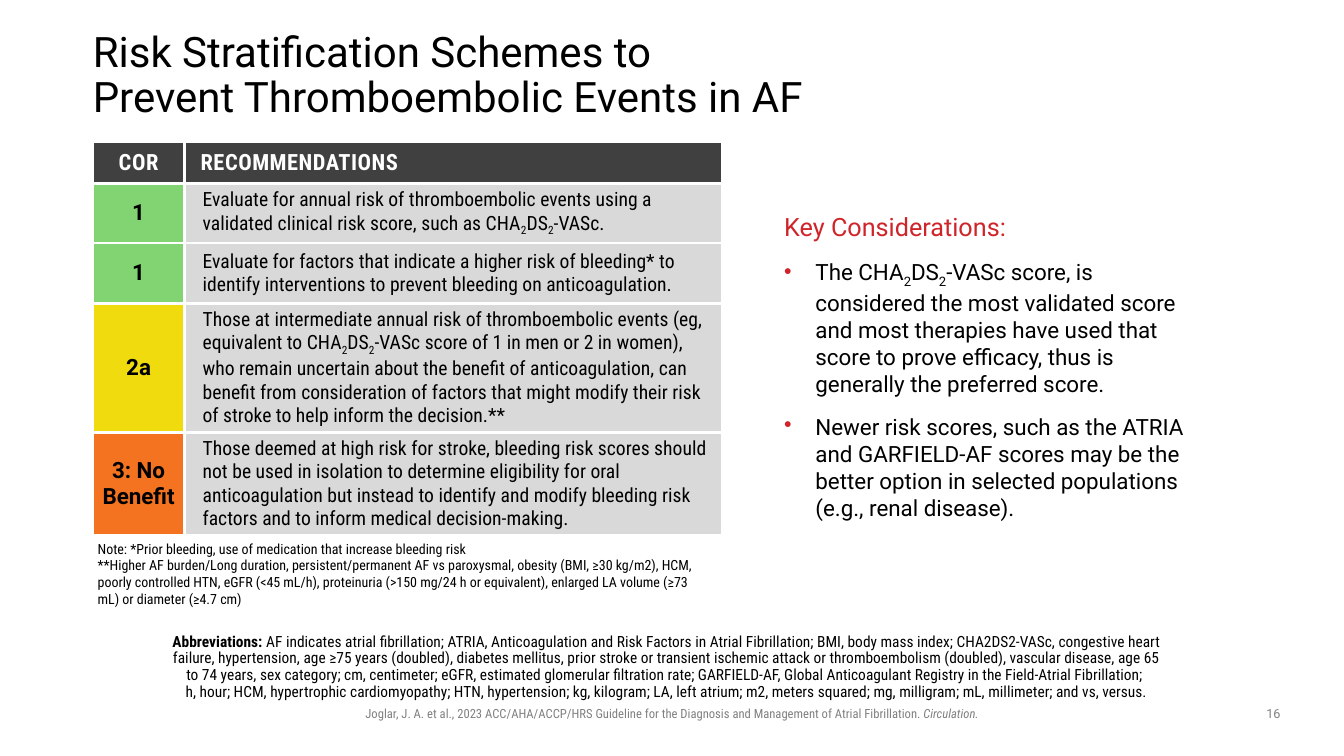
from lxml import etree
from pptx import Presentation
from pptx.dml.color import RGBColor
from pptx.enum.text import MSO_ANCHOR, MSO_AUTO_SIZE, PP_ALIGN
from pptx.oxml.ns import qn
from pptx.util import Inches, Pt

MIDDLE, CENTER, LEFT = MSO_ANCHOR.MIDDLE, PP_ALIGN.CENTER, PP_ALIGN.LEFT
NO_FIT = MSO_AUTO_SIZE.NONE
BLACK = RGBColor(0x00, 0x00, 0x00)
WHITE = RGBColor(0xFF, 0xFF, 0xFF)
DARK = RGBColor(0x40, 0x40, 0x40)
GRAY = RGBColor(0x80, 0x80, 0x80)
PALE = RGBColor(0xD9, 0xD9, 0xD9)
RED = RGBColor(0xCF, 0x24, 0x29)
GREEN = RGBColor(0x82, 0xD4, 0x72)
YELLOW = RGBColor(0xF0, 0xDB, 0x0E)
ORANGE = RGBColor(0xF4, 0x73, 0x20)
SANS, SLIM = "Roboto", "Roboto Condensed"

# Text between two ~ marks takes the special style: subscript, bold or italic.
TITLE = "Risk Stratiﬁcation Schemes to \nPrevent Thromboembolic Events in AF"
HEADS = [("COR", 0.5, CENTER, 0.1), ("RECOMMENDATIONS", 0.4, LEFT, 0.16)]
ADVICE = [
    ("1", GREEN, 0.59,
     "Evaluate for annual risk of thromboembolic events using a validated "
     "clinical risk score, such as CHA~2~DS~2~-VASc."),
    ("1", GREEN, 0.6,
     "Evaluate for factors that indicate a higher risk of bleeding* to "
     "identify interventions to prevent bleeding on anticoagulation."),
    ("2a", YELLOW, 1.28,
     "Those at intermediate annual risk of thromboembolic events (eg, "
     "equivalent to CHA~2~DS~2~-VASc score of 1 in men or 2 in women), who "
     "remain uncertain about the benefit of anticoagulation, can benefit from "
     "consideration of factors that might modify their risk of stroke to help "
     "inform the decision.**"),
    ("3: No Benefit", ORANGE, 1.01,
     "Those deemed at high risk for stroke, bleeding risk scores should not be "
     "used in isolation to determine eligibility for oral anticoagulation but "
     "instead to identify and modify bleeding risk factors and to inform "
     "medical decision-making."),
]
NOTES = [
    "Note: *Prior bleeding, use of medication that increase bleeding risk",
    "**Higher AF burden/Long duration, persistent/permanent AF vs paroxysmal, "
    "obesity (BMI, ≥30 kg/m2), HCM, poorly controlled HTN, eGFR (<45 mL/h), "
    "proteinuria (>150 mg/24 h or equivalent), enlarged LA volume (≥73 mL) or "
    "diameter (≥4.7 cm)",
]
KEY_HEAD = "Key Considerations:"
KEYS = [
    "The CHA~2~DS~2~-VASc score, is considered the most validated score and "
    "most therapies have used that score to prove efficacy, thus is generally "
    "the preferred score.",
    "Newer risk scores, such as the ATRIA and GARFIELD-AF scores may be the "
    "better option in selected populations (e.g., renal disease).",
]
TERMS = (
    "~Abbreviations: ~AF indicates atrial fibrillation; ATRIA, Anticoagulation "
    "and Risk Factors in Atrial Fibrillation; BMI, body mass index; "
    "CHA2DS2-VASc, congestive heart failure, hypertension, age ≥75 years "
    "(doubled), diabetes mellitus, prior stroke or transient ischemic attack or "
    "thromboembolism (doubled), vascular disease, age 65 to 74 years, sex "
    "category; cm, centimeter; eGFR, estimated glomerular filtration rate; "
    "GARFIELD-AF, Global Anticoagulant Registry in the Field-Atrial "
    "Fibrillation; \nh, hour; HCM, hypertrophic cardiomyopathy; HTN, "
    "hypertension; kg, kilogram; LA, left atrium; m2, meters squared; mg, "
    "milligram; mL, millimeter; and vs, versus."
)
SOURCE = (
    "Joglar, J. A. et al., 2023 ACC/AHA/ACCP/HRS Guideline for the Diagnosis "
    "and Management of Atrial Fibrillation. ~Circulation.~"
)
PAGE = "16"


def write(par, text, size, font=SLIM, color=BLACK, bold=False, mark="sub", gap=0):
    """Fill a paragraph; odd ~ pieces get the mark, newlines become breaks."""
    for i, piece in enumerate(text.split("~")):
        for j, line in enumerate(piece.split("\n")):
            if j:
                par.add_line_break()
            if not line:
                continue
            run = par.add_run()
            run.text = line
            run.font.size, run.font.name = Pt(size), font
            run.font.color.rgb = color
            run.font.bold = bold or (i % 2 == 1 and mark == "bold")
            if gap:
                run.font._element.set("spc", str(int(gap * 100)))
            if i % 2 and mark == "sub":
                run.font._element.set("baseline", "-25000")
            if i % 2 and mark == "italic":
                run.font.italic = True
    for br in par._p.findall(qn("a:br")):
        etree.SubElement(br, qn("a:rPr")).set("sz", str(size * 100))


def inset(box, left, top, right, bottom):
    box.margin_left, box.margin_top = Inches(left), Inches(top)
    box.margin_right, box.margin_bottom = Inches(right), Inches(bottom)


def add_box(*place):
    frame = slide.shapes.add_textbox(*map(Inches, place)).text_frame
    frame.word_wrap = True
    return frame


def add_bullet(par):
    props = par._p.get_or_add_pPr()
    props.set("marL", str(Inches(0.31)))
    props.set("indent", str(-Inches(0.31)))
    tint = etree.SubElement(props, qn("a:buClr"))
    etree.SubElement(tint, qn("a:srgbClr")).set("val", str(RED))
    etree.SubElement(props, qn("a:buChar")).set("char", "•")


def style_cell(cell, fill):
    """Set the fill and white borders; the fill must follow the border XML."""
    cell.vertical_anchor = MIDDLE
    props = cell._tc.get_or_add_tcPr()
    for side in ("lnL", "lnR", "lnT", "lnB"):
        edge = etree.SubElement(props, qn("a:" + side), w=str(Pt(2.25)))
        paint = etree.SubElement(edge, qn("a:solidFill"))
        etree.SubElement(paint, qn("a:srgbClr")).set("val", str(WHITE))
    cell.fill.solid()
    cell.fill.fore_color.rgb = fill


def add_table():
    highs = [0.41] + [row[2] for row in ADVICE]
    wides = [0.91, 5.33]
    place = map(Inches, (0.92, 1.41, sum(wides), sum(highs)))
    table = slide.shapes.add_table(len(highs), len(wides), *place).table
    for col, wide in zip(table.columns, wides):
        col.width = Inches(wide)
    for row, high in zip(table.rows, highs):
        row.height = Inches(high)
    for c, (head, gap, align, left) in enumerate(HEADS):
        cell = table.cell(0, c)
        style_cell(cell, DARK)
        inset(cell, left, 0.05, 0.1, 0.05)
        par = cell.text_frame.paragraphs[0]
        par.alignment = align
        write(par, head, 16, color=WHITE, bold=True, gap=gap)
    for r, (rank, fill, _, text) in enumerate(ADVICE, 1):
        cor, rec = table.cell(r, 0), table.cell(r, 1)
        style_cell(cor, fill)
        style_cell(rec, PALE)
        inset(cor, 0.05, 0.05, 0.05, 0.05)
        inset(rec, 0.18, 0.05, 0.05, 0.05)
        par = cor.text_frame.paragraphs[0]
        par.alignment = CENTER
        write(par, rank, 16, SANS, bold=True)
        write(rec.text_frame.paragraphs[0], text, 14)


deck = Presentation()
deck.slide_width, deck.slide_height = Inches(13.33), Inches(7.5)
slide = deck.slides.add_slide(deck.slide_layouts[5])

title = slide.shapes.title
title.left, title.top, title.width, title.height = map(Inches, (0.92, 0.4, 8.87, 0.72))
frame = title.text_frame
frame.auto_size, frame.vertical_anchor = NO_FIT, MIDDLE
inset(frame, 0, 0, 0, 0)
par = frame.paragraphs[0]
par.alignment, par.line_spacing = LEFT, 0.9
write(par, TITLE, 30, SANS)

add_table()

frame = add_box(0.87, 5.31, 6.29, 0.96)
for i, note in enumerate(NOTES):
    write(frame.add_paragraph() if i else frame.paragraphs[0], note, 10)

frame = add_box(7.68, 2.05, 4.4, 3.16)
par = frame.paragraphs[0]
par.space_after = Pt(12)
write(par, KEY_HEAD, 18, SANS, RED)
for key in KEYS:
    par = frame.add_paragraph()
    add_bullet(par)
    par.space_after = Pt(12)
    write(par, key, 16, SANS)

frame = add_box(1.69, 6.24, 9.95, 0.68)
inset(frame, 0, 0.05, 0.1, 0.05)
par = frame.paragraphs[0]
par.alignment, par.line_spacing = CENTER, 0.9
write(par, TERMS, 11, mark="bold")

for place, text, font in [((2.94, 6.95, 7.45, 0.25), SOURCE, SLIM),
                          ((12.42, 6.95, 0.42, 0.26), PAGE, SANS)]:
    par = add_box(*place).paragraphs[0]
    par.alignment = CENTER
    write(par, text, 9, font, GRAY, mark="italic")

deck.save("out.pptx")
